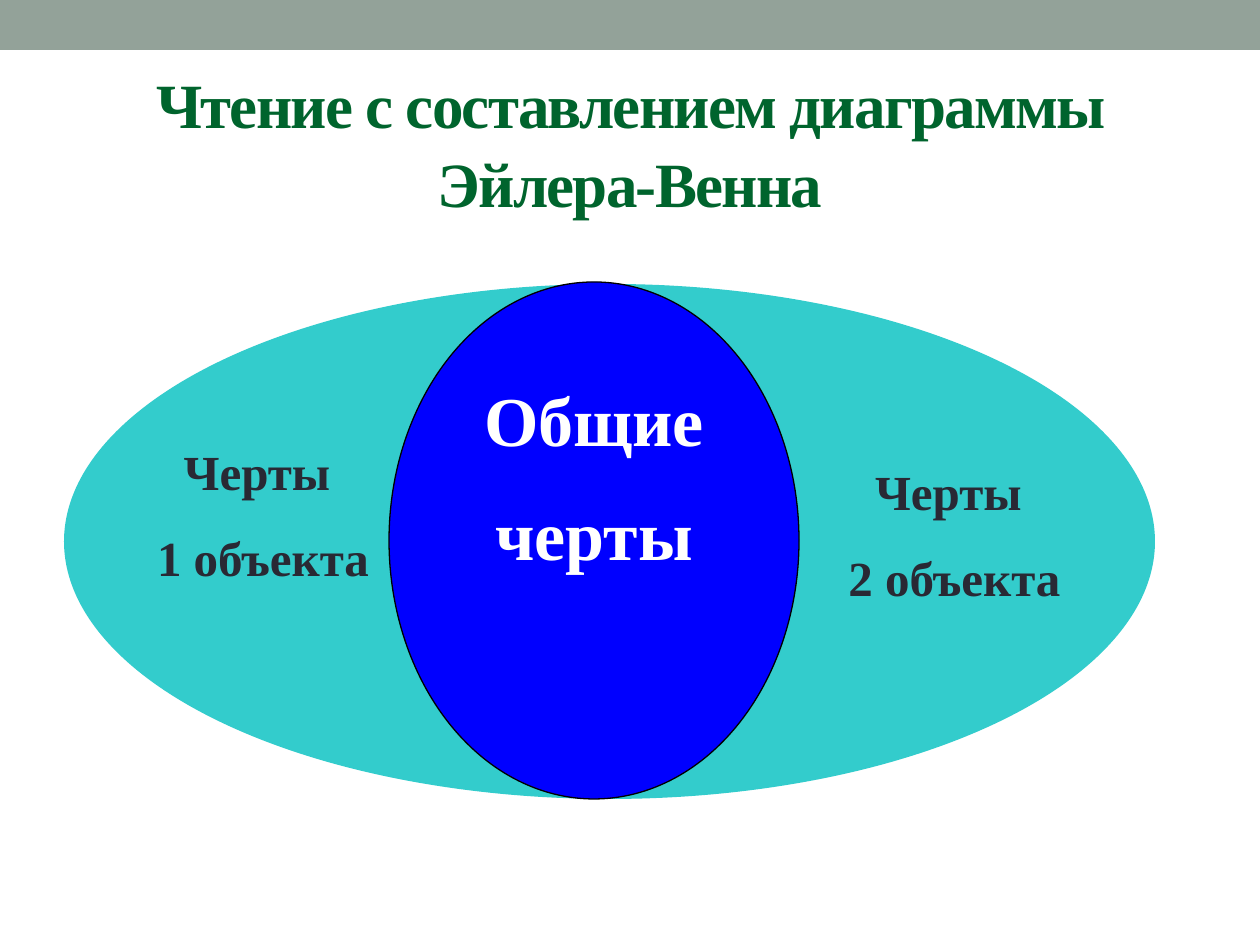
from pptx import Presentation
from pptx import util as u
from pptx.dml.color import RGBColor
from pptx.enum import shapes, text

COLORS = {"bar": "93A299", "title": "00642D", "outer": "33CCCC", "common": "0000FF",
          "outline": "000000", "light": "FFFFFF", "dark": "292934"}


class VennSlide:
    """Style and current slide, with lengths given in px at 126 to the inch."""

    FONT = "Times New Roman"

    def __init__(self, prs):
        prs.slide_width, prs.slide_height = self.px(1260), self.px(945)
        self.s = prs.slides.add_slide(prs.slide_layouts[5])

    @staticmethod
    def px(n):
        return u.Emu(round(n * 914400 / 126))

    @staticmethod
    def rgb(name):
        return RGBColor.from_string(COLORS[name])

    def format(self, p, size, color, spacing, after=0):
        p.alignment = text.PP_ALIGN.CENTER
        p.line_spacing = spacing
        p.space_after = u.Pt(after)
        for r in p.runs:
            r.font.name, r.font.size, r.font.bold = self.FONT, u.Pt(size), True
            r.font.color.rgb = self.rgb(color)

    def title(self, box, words):
        sp = self.s.shapes.title
        sp.left, sp.top, sp.width, sp.height = map(self.px, box)
        tf = sp.text_frame
        tf.text = words
        tf.auto_size = text.MSO_AUTO_SIZE.NONE
        tf.vertical_anchor = text.MSO_ANCHOR.MIDDLE
        self.format(tf.paragraphs[0], 36, "title", 1.05)
        tf.paragraphs[0].runs[0]._r.get_or_add_rPr().set("spc", "-100")

    def shape(self, parent, kind, box, fill, line=None):
        sp = parent.shapes.add_shape(kind, *map(self.px, box))
        sp.shadow.inherit = False
        sp.fill.solid()
        sp.fill.fore_color.rgb = self.rgb(fill)
        if line:
            sp.line.color.rgb = self.rgb(line)
            sp.line.width = u.Pt(0.75)
        else:
            sp.line.fill.background()
        return sp

    def label(self, sp, words, size, color):
        tf = sp.text_frame
        tf.text = words
        tf.word_wrap = True
        tf.vertical_anchor = text.MSO_ANCHOR.TOP
        for p in tf.paragraphs:
            self.format(p, size, color, 1.15, 10)


def main():
    prs = Presentation()
    venn = VennSlide(prs)
    rect, oval = shapes.MSO_SHAPE.RECTANGLE, shapes.MSO_SHAPE.OVAL

    venn.shape(venn.s, rect, (0, 0, 1260, 50), "bar")
    venn.title((63, 73, 1134, 136), "Чтение с составлением диаграммы Эйлера-Венна")

    diagram = venn.s.shapes.add_group_shape()
    venn.shape(diagram, oval, (64, 284, 1091, 515), "outer")
    common = venn.shape(diagram, oval, (389, 282, 410, 517), "common", "outline")
    venn.label(common, "Общие\nчерты", 40, "light")
    for number, box in enumerate([(140, 427, 246, 188), (828, 447, 253, 188)], 1):
        sp = venn.shape(diagram, rect, box, "outer")
        venn.label(sp, f"Черты \n{number} объекта", 28, "dark")

    prs.save("out.pptx")


if __name__ == "__main__":
    main()
